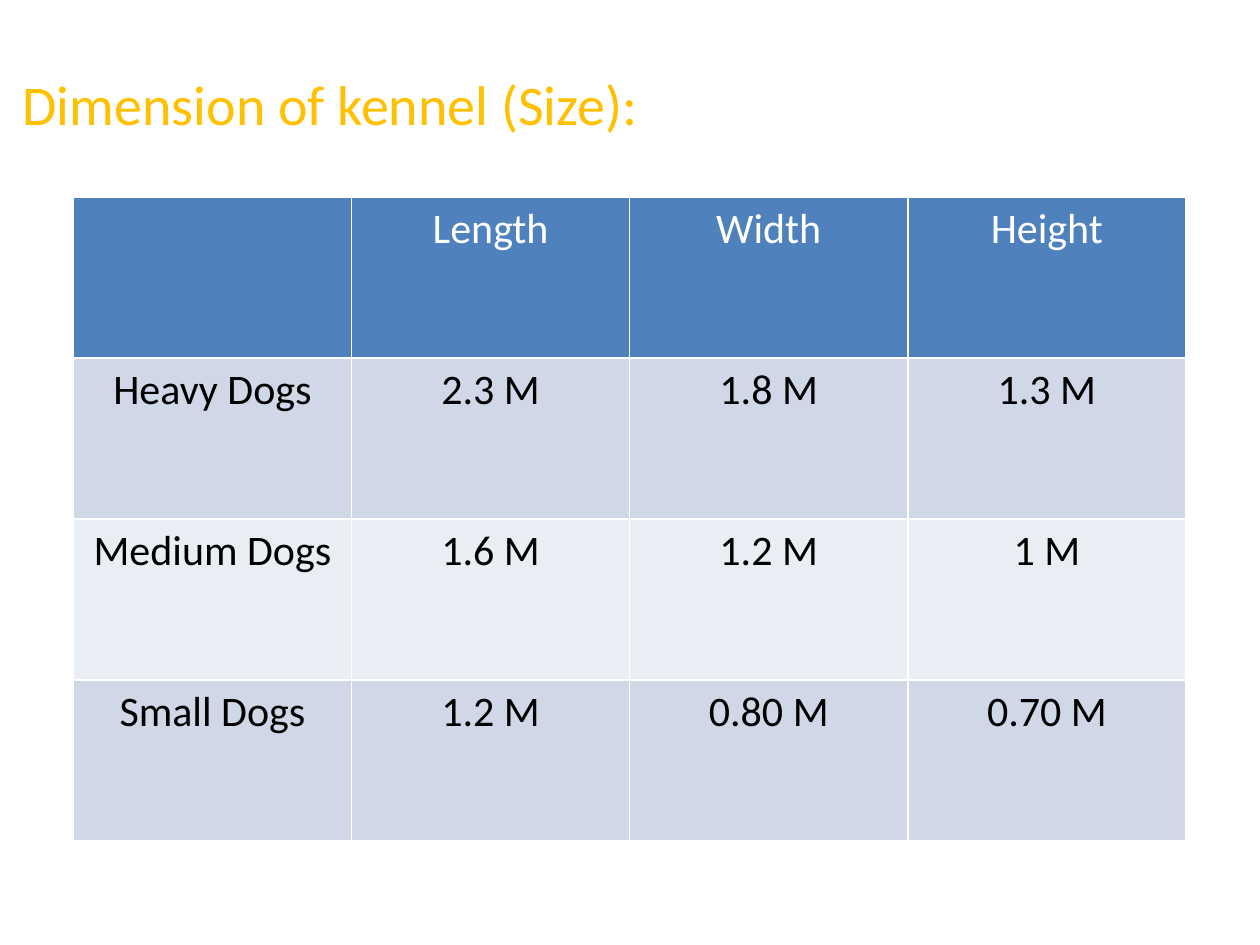
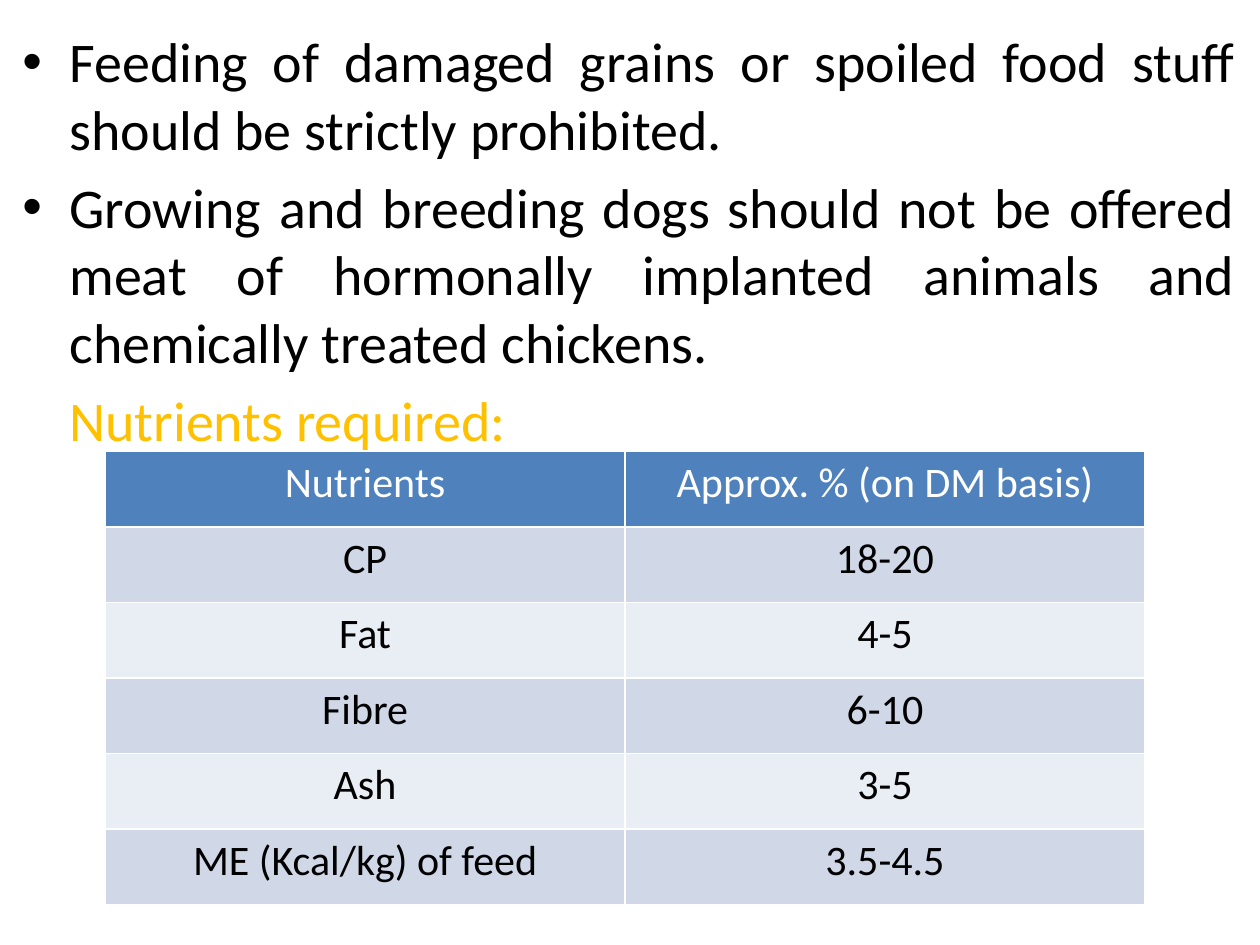
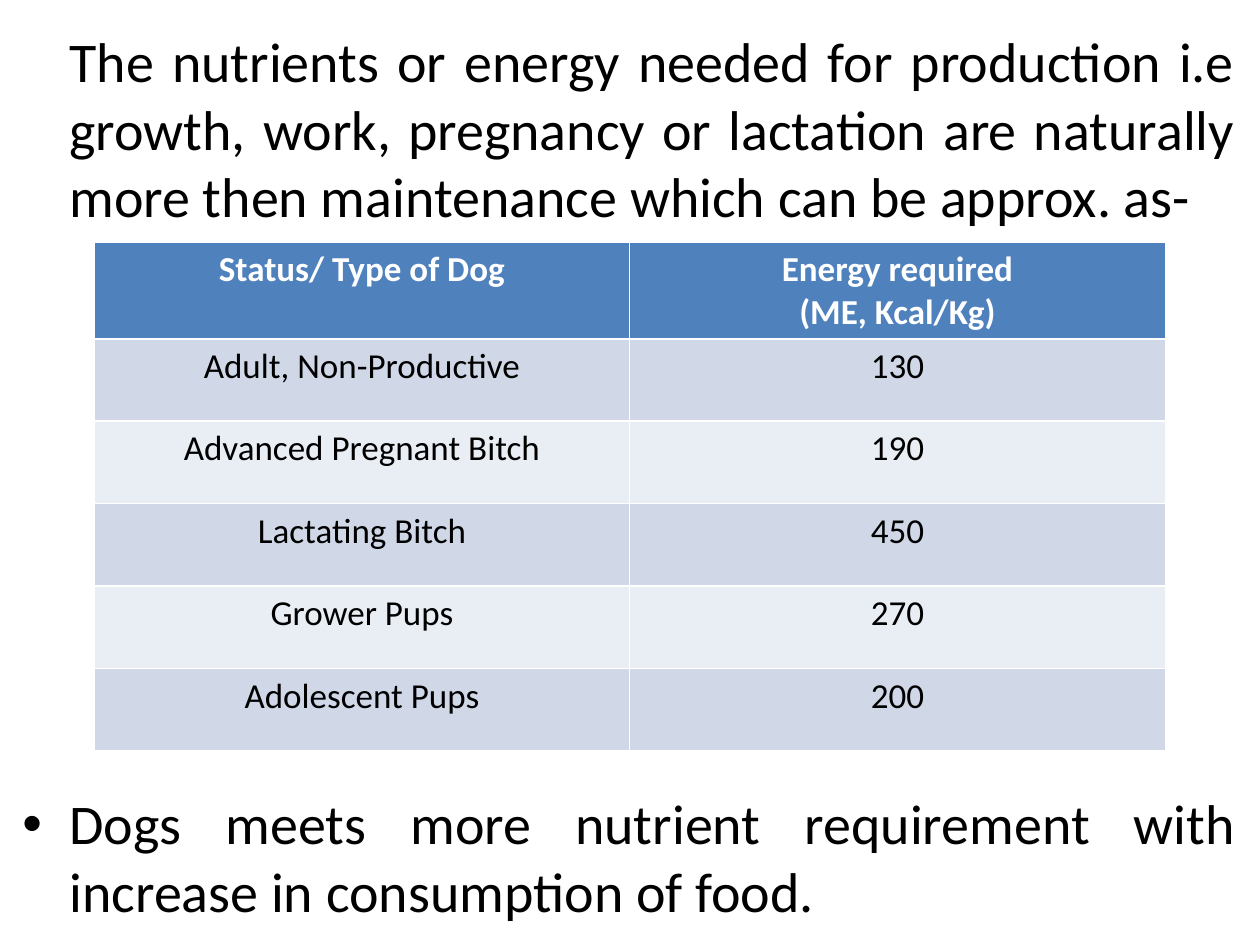
from collections import namedtuple
from dataclasses import dataclass

from lxml.etree import SubElement
from pptx import Presentation
from pptx.dml.color import RGBColor as Rgb
from pptx.enum.text import MSO_ANCHOR as Anchor, MSO_AUTO_SIZE as AutoSize, PP_ALIGN as Align
from pptx.oxml.ns import qn
from pptx.util import Cm, Pt

Box = namedtuple("Box", "left top width height")
Point = namedtuple("Point", "text color align bulleted")


@dataclass(frozen=True)
class Theme:
    """Colours, type sizes and indents shared by the slides."""

    font: str = "Calibri"
    accent: Rgb = Rgb(0xFF, 0xC0, 0x00)
    ink: Rgb = Rgb(0x00, 0x00, 0x00)
    header_ink: Rgb = Rgb(0xFF, 0xFF, 0xFF)
    header_fill: Rgb = Rgb(0x4F, 0x81, 0xBD)
    bands: tuple = (Rgb(0xD0, 0xD8, 0xE8), Rgb(0xE9, 0xED, 0xF4))
    body_size: float = 32
    space_before: float = 6.4
    indent: int = Cm(0.95)
    text_left: float = 0.2
    text_width: float = 24.97
    text_top: float = 0.42


THEME = Theme()

KENNEL_ROWS = [
    ("", "Length", "Width", "Height"),
    ("Heavy Dogs", "2.3 M", "1.8 M", "1.3 M"),
    ("Medium Dogs", "1.6 M", "1.2 M", "1 M"),
    ("Small Dogs", "1.2 M", "0.80 M", "0.70 M"),
]
NUTRIENT_ROWS = [
    ("Nutrients", "Approx. % (on DM basis)"),
    ("CP", "18-20"),
    ("Fat", "4-5"),
    ("Fibre", "6-10"),
    ("Ash", "3-5"),
    ("ME (Kcal/kg) of feed", "3.5-4.5"),
]
ENERGY_ROWS = [
    ("Status/ Type of Dog", "Energy required\n(ME, Kcal/Kg)"),
    ("Adult, Non-Productive", "130"),
    ("Advanced Pregnant Bitch", "190"),
    ("Lactating Bitch", "450"),
    ("Grower Pups", "270"),
    ("Adolescent Pups", "200"),
]


def text_region(top, height):
    """Return the full-width text box at a given height on the page."""
    return Box(THEME.text_left, top, THEME.text_width, height)


def style_font(para, size, color, bold=False):
    """Give a paragraph its typeface, size, colour and weight."""
    font = para.font
    font.name, font.size, font.bold = THEME.font, Pt(size), bold
    font.color.rgb = color


def indent_point(para, bulleted):
    """Indent a paragraph, with a hanging bullet if asked."""
    properties = para._p.get_or_add_pPr()
    properties.set("marL", str(THEME.indent))
    properties.set("indent", str(-THEME.indent if bulleted else 0))
    if bulleted:
        SubElement(properties, qn("a:buFont"), typeface="Arial")
        SubElement(properties, qn("a:buChar"), char="•")
    else:
        SubElement(properties, qn("a:buNone"))


def place_title(page, text, box):
    """Move and format the title placeholder."""
    title = page.shapes.title
    title.left, title.top, title.width, title.height = map(Cm, box)
    frame = title.text_frame
    frame.text = text
    frame.auto_size = AutoSize.NONE
    frame.vertical_anchor = Anchor.TOP
    para = frame.paragraphs[0]
    para.alignment = Align.LEFT
    style_font(para, THEME.body_size, THEME.accent)


def place_points(page, points, box):
    """Write indented paragraphs into a text box."""
    frame = page.shapes.add_textbox(*map(Cm, box)).text_frame
    frame.word_wrap = True
    for number, point in enumerate(points):
        para = frame.add_paragraph() if number else frame.paragraphs[0]
        para.text = point.text
        para.alignment = point.align
        para.space_before = Pt(THEME.space_before if number else 0)
        indent_point(para, point.bulleted)
        style_font(para, THEME.body_size, point.color)


def place_table(page, rows, box, size, header_height=None, bold_header=False):
    """Draw a banded table with equal columns and equal body rows."""
    table = page.shapes.add_table(len(rows), len(rows[0]), *map(Cm, box)).table
    if header_height:
        body_height = (box.height - header_height) / (len(rows) - 1)
        for number, row in enumerate(table.rows):
            row.height = Cm(body_height if number else header_height)
    for row_number, values in enumerate(rows):
        is_header = row_number == 0
        fill = THEME.header_fill if is_header else THEME.bands[(row_number - 1) % 2]
        color = THEME.header_ink if is_header else THEME.ink
        for column, value in enumerate(values):
            cell = table.cell(row_number, column)
            cell.text = value
            cell.fill.solid()
            cell.fill.fore_color.rgb = fill
            for para in cell.text_frame.paragraphs:
                para.alignment = Align.CENTER
                style_font(para, size, color, is_header and bold_header)


def build_kennel_slide(page):
    """Show the kennel dimensions for each size of dog."""
    place_title(page, "Dimension of kennel (Size):", text_region(1.27, 1.8))
    place_table(page, KENNEL_ROWS, Box(1.48, 3.97, 22.43, 12.98), 24)


def build_nutrient_slide(page):
    """Show the feeding cautions above the required nutrients."""
    points = [
        Point("Feeding of damaged grains or spoiled food stuff should be strictly prohibited.",
              THEME.ink, Align.JUSTIFY, True),
        Point("Growing and breeding dogs should not be offered meat of hormonally implanted "
              "animals and chemically treated chickens.", THEME.ink, Align.JUSTIFY, True),
        Point("Nutrients required:", THEME.accent, Align.LEFT, False),
    ]
    place_points(page, points, text_region(THEME.text_top, 8.8))
    place_table(page, NUTRIENT_ROWS, Box(2.12, 9.1, 20.96, 9.14), 24)


def build_energy_slide(page):
    """Show the energy needed by each type of dog."""
    opening = Point("The nutrients or energy needed for production i.e growth, work, pregnancy "
                    "or lactation are naturally more then maintenance which can be approx. as-",
                    THEME.ink, Align.JUSTIFY, False)
    closing = Point("Dogs meets more nutrient requirement with increase in consumption of food.",
                    THEME.ink, Align.JUSTIFY, True)
    place_points(page, [opening], text_region(THEME.text_top, 4.35))
    place_table(page, ENERGY_ROWS, Box(1.9, 4.88, 21.59, 10.16), 20, 1.85, bold_header=True)
    place_points(page, [closing], text_region(15.78, 3))


def main():
    """Build the deck and save it."""
    deck = Presentation()
    deck.slide_width, deck.slide_height = Cm(25.4), Cm(19.05)
    title_only, blank = deck.slide_layouts[5], deck.slide_layouts[6]
    build_kennel_slide(deck.slides.add_slide(title_only))
    build_nutrient_slide(deck.slides.add_slide(blank))
    build_energy_slide(deck.slides.add_slide(blank))
    deck.save("out.pptx")


if __name__ == "__main__":
    main()
